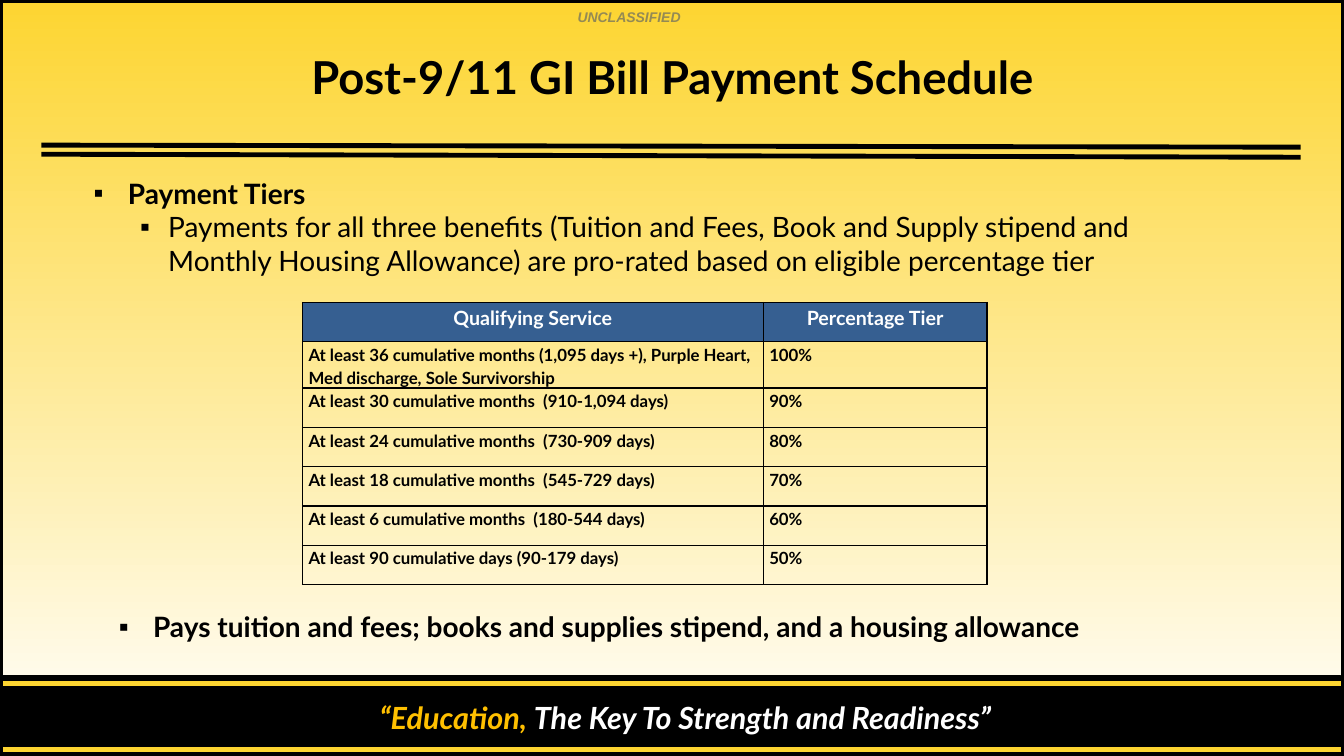
from lxml.etree import SubElement
from pptx import Presentation
from pptx.dml.color import RGBColor
from pptx.enum.shapes import MSO_CONNECTOR, MSO_SHAPE
from pptx.enum.text import MSO_ANCHOR, PP_ALIGN
from pptx.oxml.ns import qn
from pptx.util import Inches, Pt

COLORS = {
    "black": "000000",
    "white": "FFFFFF",
    "gold": "FDD531",
    "amber": "FFC000",
    "olive": "948A54",
    "blue": "365F91",
}

TIERS = [
    ("Qualifying Service", "Percentage Tier"),
    ("At least 36 cumulative months (1,095 days +), Purple Heart, "
     "Med discharge, Sole Survivorship", "100%"),
    ("At least 30 cumulative months  (910-1,094 days)", "90%"),
    ("At least 24 cumulative months  (730-909 days)", "80%"),
    ("At least 18 cumulative months  (545-729 days)", "70%"),
    ("At least 6 cumulative months  (180-544 days)", "60%"),
    ("At least 90 cumulative days (90-179 days)", "50%"),
]


def color(name):
    return RGBColor.from_string(COLORS[name])


def paint_background(page):
    fill = page.background.fill
    fill.gradient()
    fill.gradient_angle = 90
    for stop, name in zip(fill.gradient_stops, ("white", "gold")):
        stop.color.rgb = color(name)


def add_rectangle(page, left, top, width, height, line_width, fill=None):
    shape = page.shapes.add_shape(
        MSO_SHAPE.RECTANGLE, Inches(left), Inches(top), Inches(width), Inches(height))
    shape.shadow.inherit = False
    if fill:
        shape.fill.solid()
        shape.fill.fore_color.rgb = color(fill)
    else:
        shape.fill.background()
    shape.line.color.rgb = color("black")
    shape.line.width = Pt(line_width)


def add_rule(page, start, end, line_color):
    rule = page.shapes.add_connector(
        MSO_CONNECTOR.STRAIGHT, *(Inches(value) for value in (*start, *end)))
    rule.line.color.rgb = color(line_color)
    rule.line.width = Pt(3.5)
    SubElement(rule._element.spPr, qn("a:effectLst"))


def add_box(page, left, top, width, height, wrap=True):
    box = page.shapes.add_textbox(
        Inches(left), Inches(top), Inches(width), Inches(height))
    box.text_frame.word_wrap = wrap
    return box.text_frame


def add_span(para, text, size, name="black", bold=True, italic=False, font="Lato"):
    span = para.add_run()
    span.text = text
    span.font.size = Pt(size)
    span.font.name = font
    span.font.bold = bold
    span.font.italic = italic
    span.font.color.rgb = color(name)


def add_bullet(para, text, margin, hanging, bold=True):
    properties = para._p.get_or_add_pPr()
    properties.set("marL", str(Inches(margin)))
    properties.set("indent", str(-Inches(hanging)))
    SubElement(properties, qn("a:buFont"), typeface="Arial")
    SubElement(properties, qn("a:buChar"), char="▪")
    add_span(para, text, 20, bold=bold)


def add_borders(cell):
    properties = cell._tc.get_or_add_tcPr()
    for side in ("lnL", "lnR", "lnT", "lnB"):
        line = SubElement(properties, qn(f"a:{side}"), w=str(Pt(1)))
        fill = SubElement(line, qn("a:solidFill"))
        SubElement(fill, qn("a:srgbClr"), val=COLORS["black"])


def fill_cell(cell, text, is_header):
    cell.margin_left = cell.margin_right = Inches(0.06)
    cell.margin_top = cell.margin_bottom = 0
    add_borders(cell)
    para = cell.text_frame.paragraphs[0]
    para.line_spacing = 1.15
    if is_header:
        cell.fill.solid()
        cell.fill.fore_color.rgb = color("blue")
        para.alignment = PP_ALIGN.CENTER
        add_span(para, text, 14, "white")
    else:
        cell.fill.background()
        add_span(para, text, 12)


def add_tier_table(page):
    widths = (4.57, 2.22)
    row_height = 0.39
    table = page.shapes.add_table(
        len(TIERS), len(widths), Inches(3), Inches(3),
        Inches(sum(widths)), Inches(row_height * len(TIERS))).table
    table.first_row = False
    table.horz_banding = False
    for column, width in zip(table.columns, widths):
        column.width = Inches(width)
    for index, (row, texts) in enumerate(zip(table.rows, TIERS)):
        row.height = Inches(row_height)
        for cell, text in zip(row.cells, texts):
            fill_cell(cell, text, index == 0)


def add_frame(page):
    add_rectangle(page, -0.03, 6.71, 13.33, 0.75, 2, "black")
    marking = add_box(page, 5.63, 0.04, 1.24, 0.27, wrap=False).paragraphs[0]
    add_span(marking, "UNCLASSIFIED", 10, "olive", italic=True, font="Arial")
    motto = add_box(page, 2.97, 6.89, 7.66, 0.47, wrap=False).paragraphs[0]
    motto.alignment = PP_ALIGN.CENTER
    add_span(motto, "“Education, ", 21.8, "amber", italic=True)
    add_span(motto, "The Key To Strength and Readiness”", 21.8, "white", italic=True)
    add_rule(page, (-0.01, 6.78), (13.33, 6.78), "gold")
    add_rule(page, (-0.04, 7.44), (13.3, 7.44), "gold")
    add_rectangle(page, 0, 0, 13.33, 7.5, 4.75)
    add_rule(page, (0.41, 1.44), (12.9, 1.46), "black")
    add_rule(page, (0.41, 1.53), (12.9, 1.56), "black")


def add_title(page):
    frame = add_box(page, 1.67, 0.42, 10, 0.67)
    frame.vertical_anchor = MSO_ANCHOR.MIDDLE
    para = frame.paragraphs[0]
    para.alignment = PP_ALIGN.CENTER
    add_span(para, "Post-9/11 GI Bill Payment Schedule", 32.4)


def add_points(page):
    closing = add_box(page, 1.08, 6, 11.83, 0.5)
    add_bullet(closing.paragraphs[0],
               "Pays tuition and fees; books and supplies stipend, "
               "and a housing allowance", 0.34, 0.34)
    tiers = add_box(page, 0.83, 1.7, 11.41, 1.5)
    add_bullet(tiers.paragraphs[0], "Payment Tiers", 0.34, 0.34)
    detail = tiers.add_paragraph()
    detail.level = 1
    add_bullet(detail,
               "Payments for all three benefits (Tuition and Fees, Book and Supply "
               "stipend and Monthly Housing Allowance) are pro-rated based on "
               "eligible percentage tier", 0.74, 0.28, bold=False)


def main():
    deck = Presentation()
    deck.slide_width = Inches(13.33)
    deck.slide_height = Inches(7.5)
    page = deck.slides.add_slide(deck.slide_layouts[6])
    paint_background(page)
    add_frame(page)
    add_title(page)
    add_points(page)
    add_tier_table(page)
    deck.save("out.pptx")


if __name__ == "__main__":
    main()
